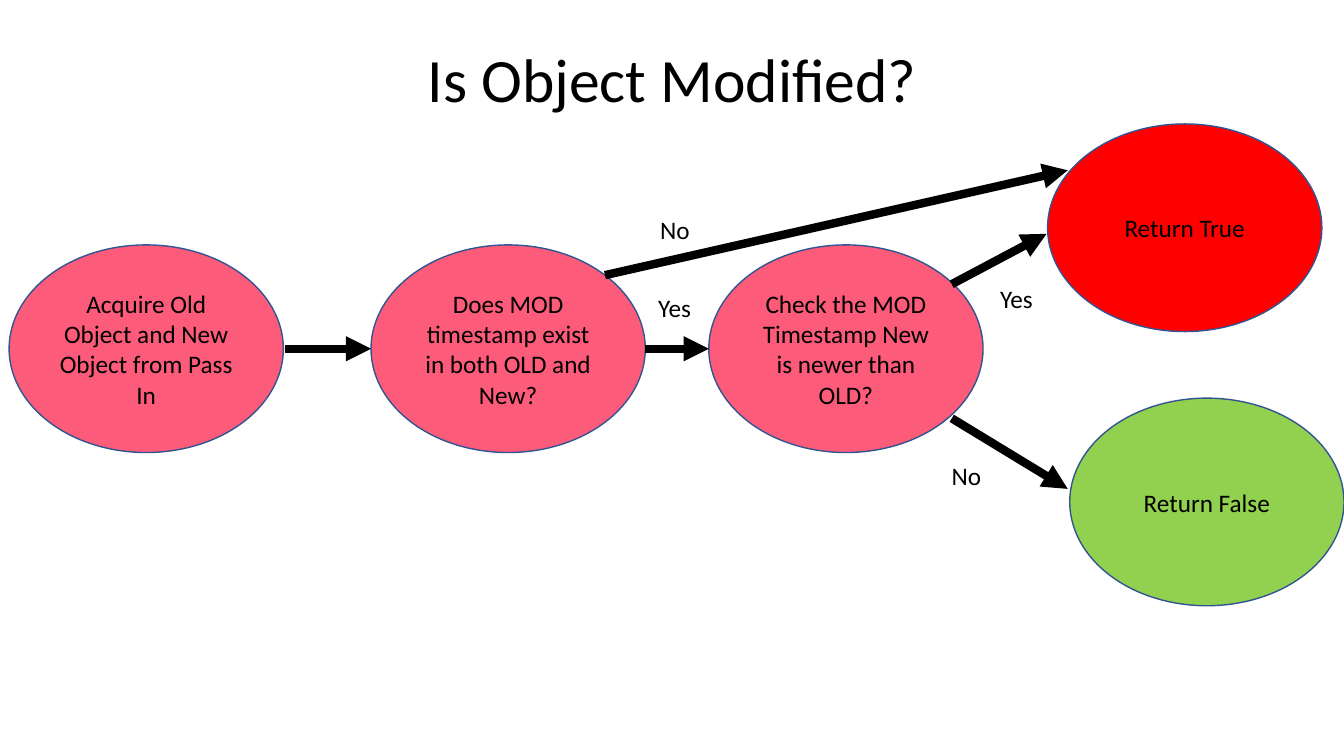
import pptx
import pptx.util
import pptx.dml.color
import pptx.enum.shapes
import pptx.enum.text
import pptx.oxml
import pptx.oxml.ns
from pptx.util import Inches

BLACK, PINK, RED, GREEN, OUTLINE = "000000", "FD5B7A", "FF0000", "92D050", "325491"
NODE_W, NODE_H = 2.72, 2.06
ROW_TOP = 2.43
ROW_MID = ROW_TOP + NODE_H / 2


def color(value):
    return pptx.dml.color.RGBColor.from_string(value)


def write(shape, text, size=18, align="CENTER", anchor="MIDDLE", spacing=None):
    tf = shape.text_frame
    tf.word_wrap = True
    tf.vertical_anchor = pptx.enum.text.MSO_ANCHOR[anchor]
    p = tf.paragraphs[0]
    p.alignment = pptx.enum.text.PP_ALIGN[align]
    if spacing:
        p.line_spacing = spacing
    r = p.add_run()
    r.text = text
    r.font.name = "Calibri"
    r.font.size = pptx.util.Pt(size)
    r.font.color.rgb = color(BLACK)


def add_text(s, text, x, y, w, h, **style):
    box = s.shapes.add_textbox(Inches(x), Inches(y), Inches(w), Inches(h))
    write(box, text, **style)


def add_node(s, text, x, y, fill):
    sp = s.shapes.add_shape(pptx.enum.shapes.MSO_SHAPE.OVAL,
                            Inches(x), Inches(y), Inches(NODE_W), Inches(NODE_H))
    sp.shadow.inherit = False
    sp.fill.solid()
    sp.fill.fore_color.rgb = color(fill)
    sp.line.color.rgb = color(OUTLINE)
    sp.line.width = pptx.util.Pt(1)
    write(sp, text)


def add_arrow(s, x1, y1, x2, y2):
    line = s.shapes.add_connector(pptx.enum.shapes.MSO_CONNECTOR.STRAIGHT,
                                  Inches(x1), Inches(y1), Inches(x2), Inches(y2))
    line.line.color.rgb = color(BLACK)
    line.line.width = pptx.util.Pt(6)
    # Arrowhead at the end, no shadow
    ns = pptx.oxml.ns.nsdecls("a")
    line.line._get_or_add_ln().append(
        pptx.oxml.parse_xml(f'<a:tailEnd {ns} type="triangle"/>'))
    line._element.spPr.append(pptx.oxml.parse_xml(f"<a:effectLst {ns}/>"))


def main():
    prs = pptx.Presentation()
    prs.slide_width, prs.slide_height = Inches(13.33), Inches(7.5)
    s = prs.slides.add_slide(prs.slide_layouts[6])

    # Title
    add_text(s, "Is Object Modified?", 0.92, 0.4, 11.5, 0.83, size=44, spacing=0.9)

    # Steps and outcomes
    for text, x, y, fill in [
        ("Acquire Old Object and New Object from Pass In", 0.09, ROW_TOP, PINK),
        ("Does MOD timestamp exist in both OLD and New?", 3.68, ROW_TOP, PINK),
        ("Check the MOD Timestamp New is newer than OLD?", 7.03, ROW_TOP, PINK),
        ("Return True", 10.39, 1.23, RED),
        ("Return False", 10.61, 3.95, GREEN),
    ]:
        add_node(s, text, x, y, fill)

    # Arrows
    for ends in [
        (2.83, ROW_MID, 3.68, ROW_MID),
        (6.4, ROW_MID, 7.03, ROW_MID),
        (6, 2.73, 10.59, 1.69),
        (9.44, 2.82, 10.38, 2.32),
        (9.44, 4.15, 10.59, 4.85),
    ]:
        add_arrow(s, *ends)

    # Branch labels
    for text, x, y in [("No", 6.45, 2.08), ("Yes", 6.43, 2.85),
                       ("Yes", 9.82, 2.76), ("No", 9.34, 4.52)]:
        add_text(s, text, x, y, 0.57, 0.4, align="LEFT", anchor="TOP")

    prs.save("out.pptx")


if __name__ == "__main__":
    main()
